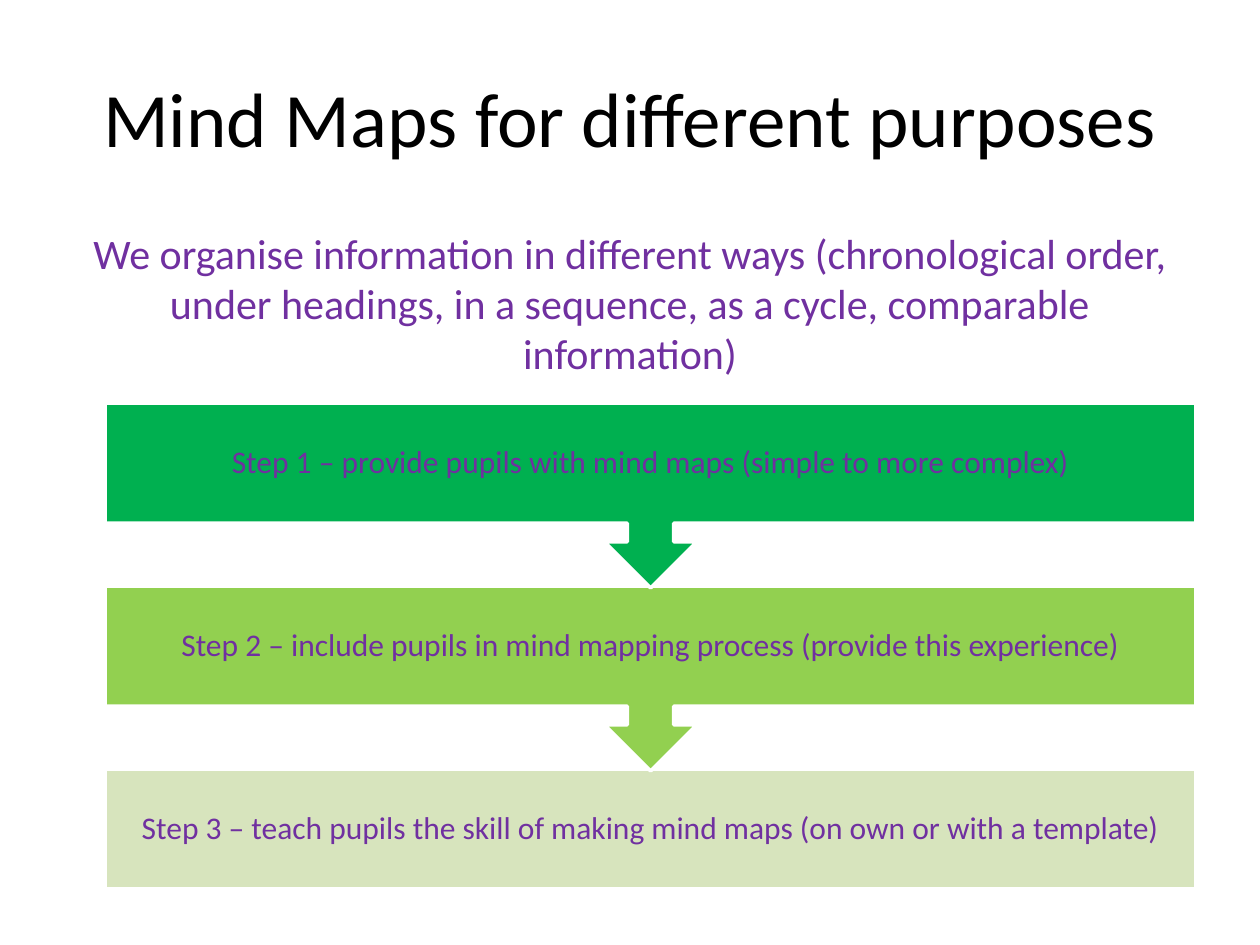
"""Build the mind map slide with its three teaching steps."""
from dataclasses import dataclass

from pptx import Presentation
from pptx.dml.color import RGBColor as Rgb
from pptx.enum.shapes import MSO_SHAPE as Form
from pptx.enum.text import MSO_ANCHOR as Anchor, PP_ALIGN as Align
from pptx.shapes.shapetree import SlideShapes as Shapes
from pptx.util import Emu, Pt

SCALE = 914400 / 126


@dataclass(frozen=True)
class Theme:
    font: str = "Calibri"
    black: str = "000000"
    purple: str = "7030A0"
    white: str = "FFFFFF"
    title: int = 44
    body: int = 24
    step: int = 18
    line: int = 2


@dataclass(frozen=True)
class Box:
    left: int
    top: int
    width: int
    height: int

    def emu(self) -> list[Emu]:
        return [px(n) for n in (self.left, self.top, self.width, self.height)]


@dataclass(frozen=True)
class Label:
    text: str
    size: int
    color: str
    anchor: Anchor = Anchor.MIDDLE
    inset: tuple[int, int] = (13, 6)
    pitch: float = 1.0


@dataclass(frozen=True)
class Step:
    text: str
    fill: str


THEME = Theme()
LEFT, TOP, WIDTH = 105, 403, 1091
PITCH, BAR, CALL = 183, 120, 185
STEPS = [
    Step("Step 1 – provide pupils with mind maps (simple to more complex)", "00B050"),
    Step("Step 2 – include pupils in mind mapping process (provide this experience)", "92D050"),
    Step("Step 3 – teach pupils the skill of making mind maps (on own or with a template)", "D7E4BD"),
]


def px(n: int) -> Emu:
    return Emu(round(n * SCALE))


def write(shapes: Shapes, box: Box, label: Label) -> None:
    frame = shapes.add_textbox(*box.emu()).text_frame
    frame.word_wrap = True
    frame.vertical_anchor = label.anchor
    side, edge = map(px, label.inset)
    frame.margin_left = frame.margin_right = side
    frame.margin_top = frame.margin_bottom = edge
    frame.text = label.text
    para = frame.paragraphs[0]
    para.alignment = Align.CENTER
    para.line_spacing = label.pitch
    font = para.runs[0].font
    font.name, font.size = THEME.font, Pt(label.size)
    font.color.rgb = Rgb.from_string(label.color)


def draw(shapes: Shapes, step: Step, top: int, last: bool) -> None:
    bar = Box(LEFT, top, WIDTH, BAR)
    form = Form.RECTANGLE if last else Form.UP_ARROW_CALLOUT
    area = bar if last else Box(LEFT, top, WIDTH, CALL)
    shape = shapes.add_shape(form, *area.emu())
    shape.rotation = 0 if last else 180
    shape.shadow.inherit = False
    shape.fill.solid()
    shape.fill.fore_color.rgb = Rgb.from_string(step.fill)
    shape.line.color.rgb = Rgb.from_string(THEME.white)
    shape.line.width = Pt(THEME.line)
    write(shapes, bar, Label(step.text, THEME.step, THEME.purple, inset=(18, 18), pitch=0.9))


def main() -> None:
    deck = Presentation()
    deck.slide_width, deck.slide_height = px(1260), px(945)
    shapes = deck.slides.add_slide(deck.slide_layouts[6]).shapes
    write(shapes, Box(63, 38, 1134, 158),
          Label("Mind Maps for different purposes", THEME.title, THEME.black))
    write(shapes, Box(63, 221, 1134, 193),
          Label("We organise information in different ways (chronological order, "
                "under headings, in a sequence, as a cycle, comparable information)",
                THEME.body, THEME.purple, Anchor.TOP))
    final = len(STEPS) - 1
    for i, step in reversed(list(enumerate(STEPS))):
        draw(shapes, step, TOP + i * PITCH, i == final)
    deck.save("out.pptx")


if __name__ == "__main__":
    main()
